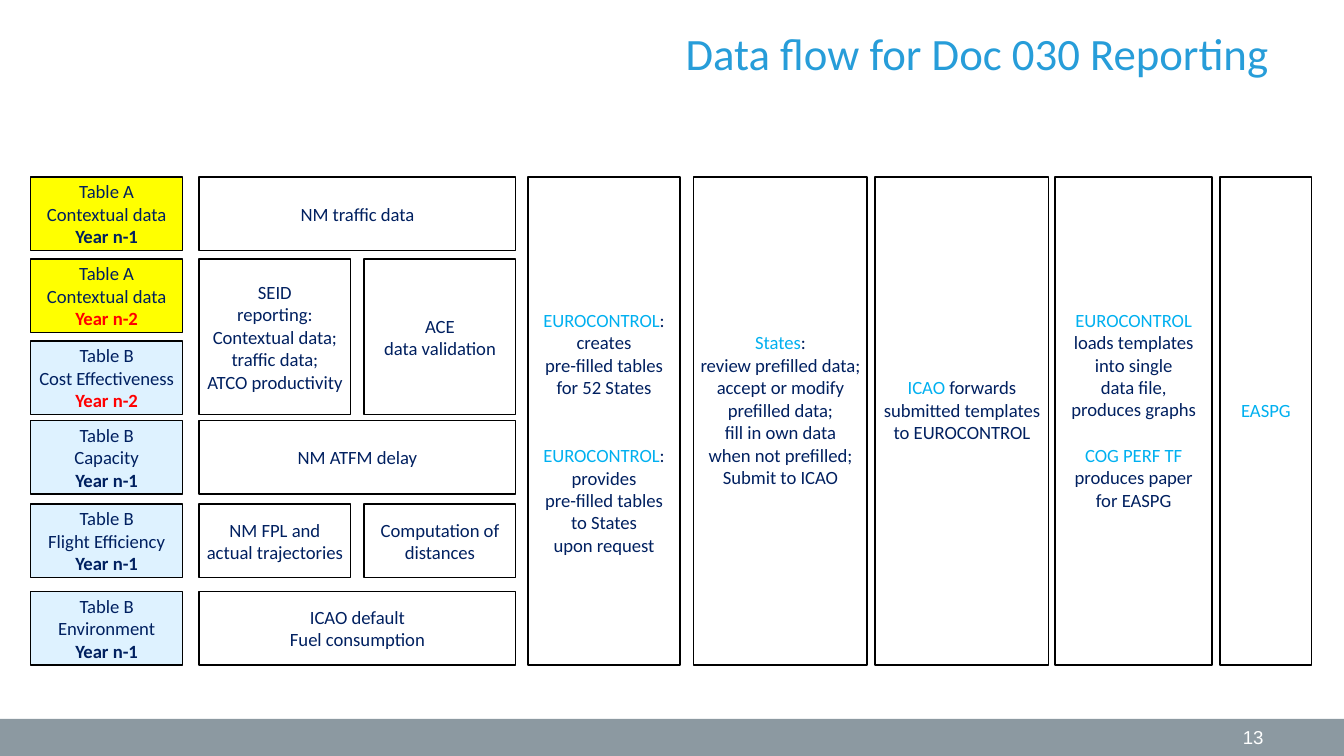
from pptx import Presentation
from pptx.dml.color import RGBColor
from pptx.enum.shapes import MSO_SHAPE
from pptx.enum.text import MSO_ANCHOR, PP_ALIGN
from pptx.util import Cm, Pt

COLORS = {
    "navy": "002060", "red": "FF0000", "cyan": "00B0F0", "title": "279DD9",
    "yellow": "FFFF00", "pale": "DEF2FF", "white": "FFFFFF",
    "black": "000000", "bar": "8C99A1",
}
LINE = 12.2                                   # height of one text line, points
ROWS = [0, 1.55, 3.1, 4.6, 6.18, 7.83]        # row tops within the diagram
ROW_H = 1.39

TOPICS = [
    ("yellow", "Table A\nContextual data", "Year n-1", "navy"),
    ("yellow", "Table A\nContextual data", "Year n-2", "red"),
    ("pale", "Table B\nCost Effectiveness", "Year n-2", "red"),
    ("pale", "Table B\nCapacity", "Year n-1", "navy"),
    ("pale", "Table B\nFlight Efficiency", "Year n-1", "navy"),
    ("pale", "Table B\nEnvironment", "Year n-1", "navy"),
]
# First row, last row, then one list of paragraphs for each box in the band
SOURCES = [
    (0, 0, [["NM traffic data"]]),
    (1, 2, [["SEID\nreporting:", "Contextual data;\ntraffic data;",
             "ATCO productivity"], ["ACE\ndata validation"]]),
    (3, 3, [["NM ATFM delay"]]),
    (4, 4, [["NM FPL and\nactual trajectories"],
            ["Computation of\ndistances"]]),
    (5, 5, [["ICAO default", "Fuel consumption"]]),
]
# Left, width, lines of shift down, paragraphs as (actor, text, lines before)
STEPS = [
    (0, 2.87, 1, [("EUROCONTROL", ":", 0),
                  ("", "creates\npre-filled tables\nfor 52 States", 0),
                  ("EUROCONTROL", ":", 2),
                  ("", "provides\npre-filled tables", 0),
                  ("", "to States\nupon request", 0)]),
    (3.13, 3.28, -1, [("States", ":\nreview prefilled data;", 0),
                      ("", "accept or modify\nprefilled data;\n"
                           "fill in own data\nwhen not prefilled;", 0),
                      ("", "Submit to ICAO", 0)]),
    (6.56, 3.28, -1, [("ICAO", " forwards\nsubmitted templates\n"
                               "to EUROCONTROL", 0)]),
    (9.96, 2.97, -1, [("EUROCONTROL", "\nloads templates\ninto single\n"
                                      "data file,\nproduces graphs", 0),
                      ("COG PERF TF", "\nproduces paper\nfor EASPG", 1)]),
    (13.08, 1.73, -1, [("EASPG", "", 0)]),
]


def rgb(name):
    return RGBColor.from_string(COLORS[name])


def add_runs(p, text, color):
    for i, line in enumerate(text.split("\n")):
        if i:
            p.add_line_break()
        if line:
            r = p.add_run()
            r.text = line
            r.font.color.rgb = rgb(color)


def write(tf, paragraphs, size=10, font="Calibri", align=PP_ALIGN.CENTER):
    """Each paragraph is (runs, bold, lines before); a run is (text, color)."""
    for i, (runs, bold, before) in enumerate(paragraphs):
        p = tf.paragraphs[0] if i == 0 else tf.add_paragraph()
        p.alignment = align
        if before:
            p.space_before = Pt(before * LINE)
        p.font.size, p.font.name, p.font.bold = Pt(size), font, bold
        for text, color in runs:
            add_runs(p, text, color)


def add_rect(s, box, fill, line=None):
    sp = s.shapes.add_shape(MSO_SHAPE.RECTANGLE, *map(Cm, box))
    sp.shadow.inherit = False
    sp.fill.solid()
    sp.fill.fore_color.rgb = rgb(fill)
    if line:
        sp.line.color.rgb = rgb(line)
        sp.line.width = Pt(0.75)
    else:
        sp.line.fill.background()
    return sp


def add_card(s, box, fill, paragraphs, shift=0):
    tf = add_rect(s, box, fill, "black").text_frame
    tf.word_wrap = False
    tf.vertical_anchor = MSO_ANCHOR.MIDDLE
    tf.margin_left = tf.margin_right = 0
    tf.margin_top = Cm(0.13) + Pt(max(shift, 0) * LINE)
    tf.margin_bottom = Cm(0.13) + Pt(max(-shift, 0) * LINE)
    write(tf, paragraphs)


def add_title(s, box):
    tf = s.shapes.add_textbox(*map(Cm, box)).text_frame
    tf.word_wrap = True
    runs = [("Data flow for Doc 030 Reporting", "title")]
    write(tf, [(runs, False, 0)], size=24)


def add_footer(s, box):
    x, y, w, h = box
    add_rect(s, box, "bar")
    number = s.shapes.add_textbox(Cm(x + w - 7.19), Cm(y), Cm(5.92), Cm(h))
    tf = number.text_frame
    tf.word_wrap = True
    tf.vertical_anchor = MSO_ANCHOR.MIDDLE
    write(tf, [([("13", "white")], False, 0)], font="Arial",
          align=PP_ALIGN.RIGHT)


def add_topics(s, box):
    x, y, w, h = box
    for top, (fill, name, year, color) in zip(ROWS, TOPICS):
        add_card(s, (x, y + top, w, ROW_H), fill,
                 [([(name, "navy")], False, 0), ([(year, color)], True, 0)])


def add_sources(s, box, gap=0.25):
    x, y, w, h = box
    for first, last, cards in SOURCES:
        height = ROWS[last] + ROW_H - ROWS[first]
        width = (w - gap * (len(cards) - 1)) / len(cards)
        for i, texts in enumerate(cards):
            add_card(s, (x + i * (width + gap), y + ROWS[first], width, height),
                     "white", [([(t, "navy")], False, 0) for t in texts])


def add_steps(s, box):
    x, y, w, h = box
    for left, width, shift, texts in STEPS:
        paragraphs = [([(actor, "cyan"), (text, "navy")], False, before)
                      for actor, text, before in texts]
        add_card(s, (x + left, y, width, h), "white", paragraphs, shift)


def main():
    prs = Presentation()
    prs.slide_width, prs.slide_height = Cm(25.4), Cm(14.29)
    s = prs.slides.add_slide(prs.slide_layouts[6])
    add_footer(s, (0, 13.59, 25.4, 0.7))
    add_title(s, (11.63, 0.36, 13.67, 1.8))
    # Diagram, from left to right
    top, height = 3.35, ROWS[-1] + ROW_H
    add_topics(s, (0.58, top, 2.87, height))
    add_sources(s, (3.76, top, 5.99, height))
    add_steps(s, (9.98, top, 14.81, height))
    prs.save("out.pptx")


if __name__ == "__main__":
    main()
